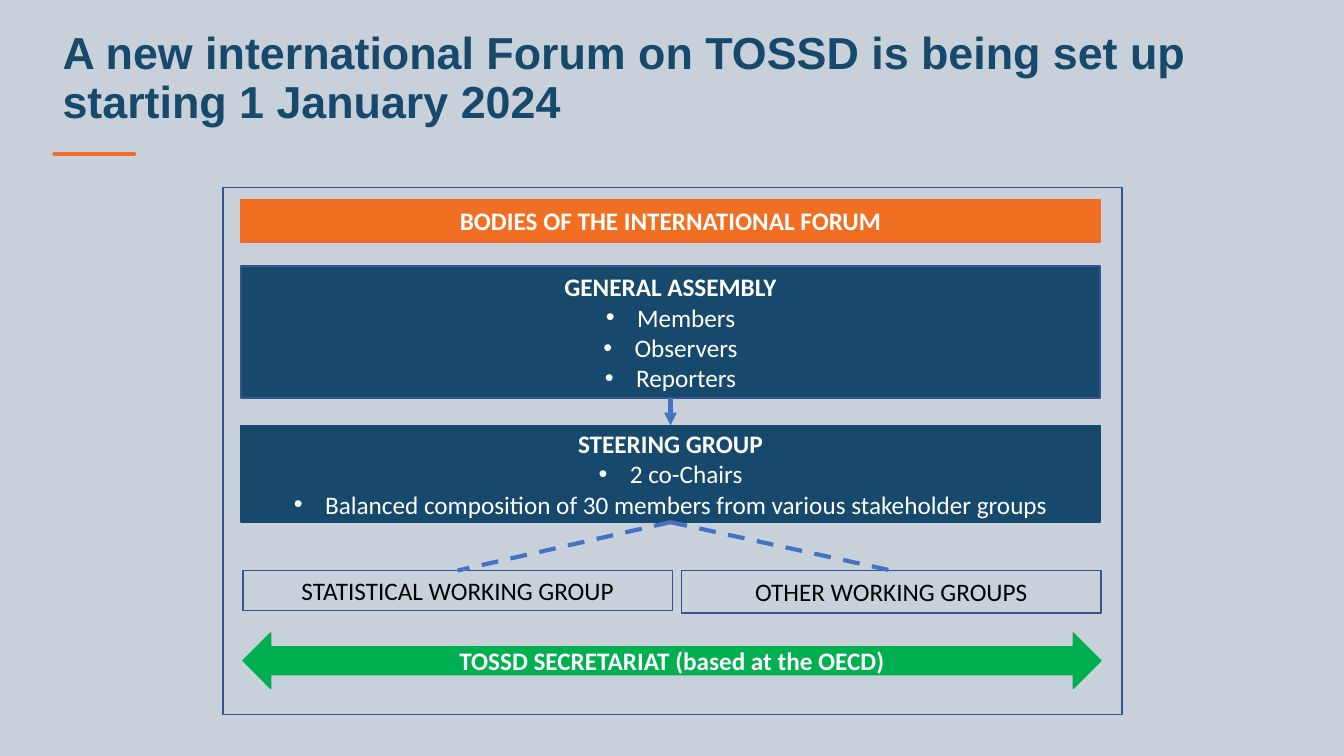
from pptx import Presentation
from pptx.dml.color import RGBColor
from pptx.enum import dml, shapes, text
from pptx.oxml.ns import qn
from pptx.util import Inches, Pt
from lxml import etree

NAVY = RGBColor(0x16, 0x49, 0x6B)
ORANGE = RGBColor(0xF1, 0x6F, 0x23)
ORANGE_EDGE = RGBColor(0xF2, 0x68, 0x2D)
ORANGE_RULE = RGBColor(0xF2, 0x6A, 0x2D)
GREEN = RGBColor(0x00, 0xB0, 0x50)
GREY = RGBColor(0xC8, 0xD0, 0xD9)
EDGE = RGBColor(0x32, 0x54, 0x91)
BLUE = RGBColor(0x44, 0x72, 0xC4)
WHITE = RGBColor(0xFF, 0xFF, 0xFF)
BLACK = RGBColor(0x00, 0x00, 0x00)

deck = Presentation()
deck.slide_width, deck.slide_height = Inches(13.33), Inches(7.5)
slide = deck.slides.add_slide(deck.slide_layouts[5])
slide.background.fill.solid()
slide.background.fill.fore_color.rgb = GREY


def add_body(kind, box, fill, edge, color, heading, bold, members):
    body = slide.shapes.add_shape(kind, *map(Inches, box))
    body.shadow.inherit = False
    if fill is None:
        body.fill.background()
    else:
        body.fill.solid()
        body.fill.fore_color.rgb = fill
    body.line.color.rgb = edge
    body.line.width = Pt(1)
    frame = body.text_frame
    frame.word_wrap = True
    frame.vertical_anchor = text.MSO_ANCHOR.MIDDLE
    lines = [heading, *members] if heading else []
    for i, line in enumerate(lines):
        para = frame.paragraphs[0] if i == 0 else frame.add_paragraph()
        para.alignment = text.PP_ALIGN.CENTER
        if i:
            props = para._p.get_or_add_pPr()
            props.set("marL", str(Inches(0.31)))
            props.set("indent", str(Inches(-0.31)))
            etree.SubElement(props, qn("a:buFont"), typeface="Arial")
            etree.SubElement(props, qn("a:buChar"), char="•")
        run = para.add_run()
        run.text = line
        font = {"name": "Calibri", "size": Pt(18), "bold": bold and i == 0}
        for key, value in font.items():
            setattr(run.font, key, value)
        run.font.color.rgb = color
    return body


def add_line(start, end, color):
    line = slide.shapes.add_connector(
        shapes.MSO_CONNECTOR.STRAIGHT, *map(Inches, (*start, *end)))
    line.line.color.rgb = color
    line.line.width = Pt(3)
    etree.SubElement(line._element.spPr, qn("a:effectLst"))
    return line


title = slide.shapes.title
place = {"left": 0.52, "top": 0.26, "width": 12.95, "height": 1.1}
for key, value in place.items():
    setattr(title, key, Inches(value))
title.text_frame.text = "A new international Forum on TOSSD is being set up starting 1 January 2024"
title.text_frame.word_wrap = True
title.text_frame.auto_size = text.MSO_AUTO_SIZE.NONE
title.text_frame.vertical_anchor = text.MSO_ANCHOR.TOP
heading = title.text_frame.paragraphs[0]
heading.alignment = text.PP_ALIGN.LEFT
heading.line_spacing = 0.9
for key, value in {"name": "Arial", "size": Pt(32), "bold": True}.items():
    setattr(heading.runs[0].font, key, value)
heading.runs[0].font.color.rgb = NAVY

add_line((0.54, 1.53), (1.33, 1.53), ORANGE_RULE).line._get_or_add_ln().set("cap", "rnd")

RECT = shapes.MSO_SHAPE.RECTANGLE
ARROW = shapes.MSO_SHAPE.LEFT_RIGHT_ARROW
bodies = [
    (RECT, (2.21, 1.86, 8.92, 5.23), None, EDGE, BLACK, "", False, []),
    (RECT, (2.39, 1.98, 8.52, 0.42), ORANGE, ORANGE_EDGE, WHITE,
     "BODIES OF THE INTERNATIONAL FORUM", True, []),
    (RECT, (2.39, 2.64, 8.52, 1.31), NAVY, EDGE, WHITE,
     "GENERAL ASSEMBLY", True, ["Members", "Observers", "Reporters"]),
    (RECT, (2.39, 4.22, 8.52, 0.96), NAVY, NAVY, WHITE, "STEERING GROUP", True,
     ["2 co-Chairs",
      "Balanced composition of 30 members from various stakeholder groups"]),
    (RECT, (2.41, 5.66, 4.26, 0.4), GREY, EDGE, BLACK,
     "STATISTICAL WORKING GROUP", False, []),
    (RECT, (6.76, 5.66, 4.16, 0.42), GREY, EDGE, BLACK,
     "OTHER WORKING GROUPS", False, []),
    (ARROW, (2.41, 6.28, 8.51, 0.55), GREEN, GREEN, WHITE,
     "TOSSD SECRETARIAT (based at the OECD)", True, []),
]
frame, banner, assembly, steering, statistical, other, secretariat = [
    add_body(*body) for body in bodies]

for upper, lower in [(assembly, steering), (steering, statistical), (steering, other)]:
    link = add_line((6.65, 3.95), (6.65, 4.22), BLUE)
    link.begin_connect(upper, 2)
    link.end_connect(lower, 0)
    if upper is assembly:
        etree.SubElement(link.line._get_or_add_ln(), qn("a:tailEnd"), type="triangle")
    else:
        link.line.dash_style = dml.MSO_LINE.DASH

deck.save("out.pptx")
